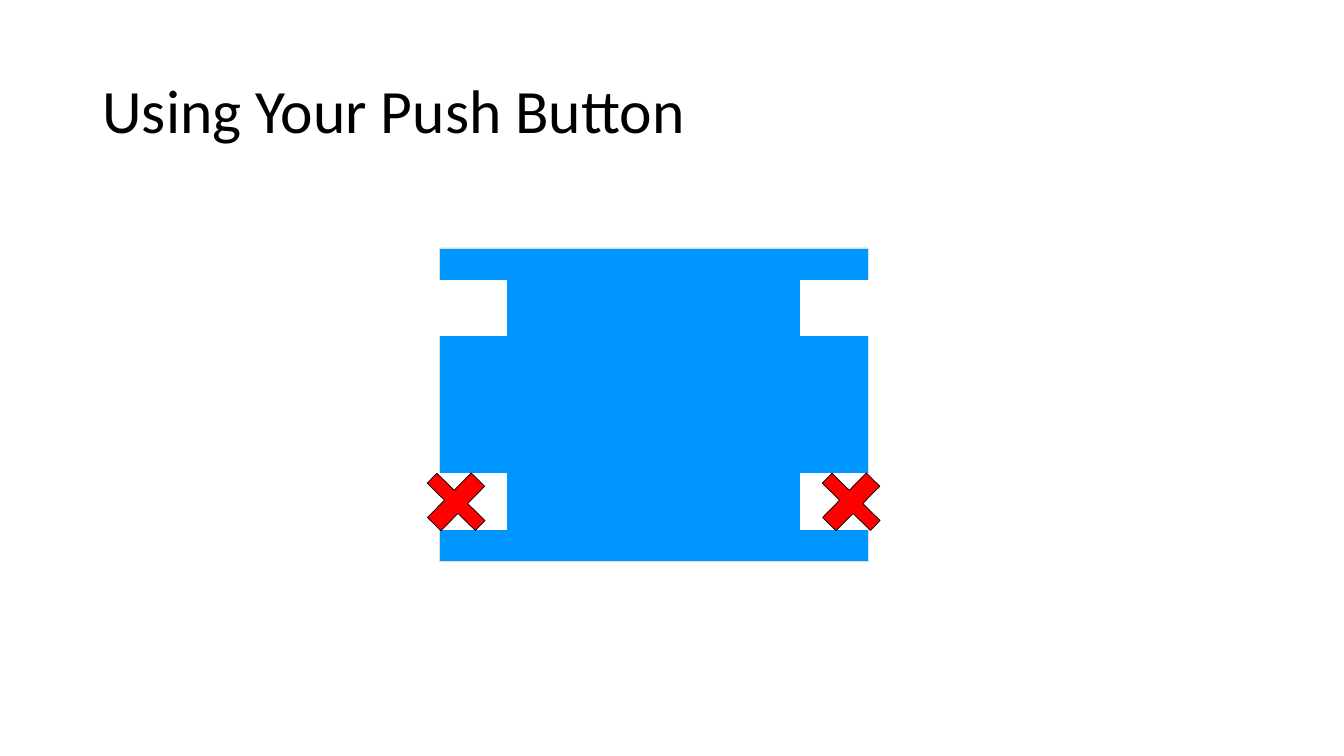
from pptx import Presentation
from pptx.dml.color import RGBColor
from pptx.enum.shapes import MSO_SHAPE
from pptx.enum.text import MSO_ANCHOR, PP_ALIGN
from pptx.util import Pt

RECT, PLUS = MSO_SHAPE.RECTANGLE, MSO_SHAPE.CROSS
MIDDLE, LEFT = MSO_ANCHOR.MIDDLE, PP_ALIGN.LEFT

BLACK = RGBColor(0x00, 0x00, 0x00)
WHITE = RGBColor(0xFF, 0xFF, 0xFF)
BLUE = RGBColor(0x00, 0x96, 0xFF)
GREY = RGBColor(0xDB, 0xDB, 0xDB)
RED = RGBColor(0xFF, 0x00, 0x00)

TITLE_LAYOUT = 5


def place(sp, left, top, width, height):
    sp.left, sp.top = Pt(left), Pt(top)
    sp.width, sp.height = Pt(width), Pt(height)


def set_title(s, text):
    sp = s.shapes.title
    place(sp, 66, 28.75, 828, 104.4)
    tf = sp.text_frame
    tf.word_wrap = True
    tf.vertical_anchor = MIDDLE
    p = tf.paragraphs[0]
    p.alignment = LEFT
    p.line_spacing = 0.9
    r = p.add_run()
    r.text = text
    r.font.name = "Calibri"
    r.font.size = Pt(44)
    r.font.color.rgb = BLACK


def add_block(s, kind, left, top, width, height, fill, line):
    sp = s.shapes.add_shape(kind, Pt(left), Pt(top), Pt(width), Pt(height))
    sp.shadow.inherit = False
    sp.fill.solid()
    sp.fill.fore_color.rgb = fill
    sp.line.color.rgb = line
    sp.line.width = Pt(0.5)
    return sp


def add_cross(s, left, top):
    sp = add_block(s, PLUS, left, top, 48.2, 44.6, RED, BLACK)
    sp.adjustments[0] = 0.389
    sp.rotation = 44.5


def main():
    prs = Presentation()
    prs.slide_width, prs.slide_height = Pt(960), Pt(540)
    s = prs.slides.add_slide(prs.slide_layouts[TITLE_LAYOUT])
    set_title(s, "Using Your Push Button")

    # Button body with a notch for each of its four legs
    add_block(s, RECT, 314, 177.1, 306, 224, BLUE, GREY)
    for left in (293, 571.7):
        for top in (200.2, 338.4):
            add_block(s, RECT, left, top, 69.1, 39.6, WHITE, WHITE)

    # Crosses over the two lower legs
    for left in (301.7, 583.9):
        add_cross(s, left, 336.2)

    prs.save("out.pptx")


if __name__ == "__main__":
    main()
